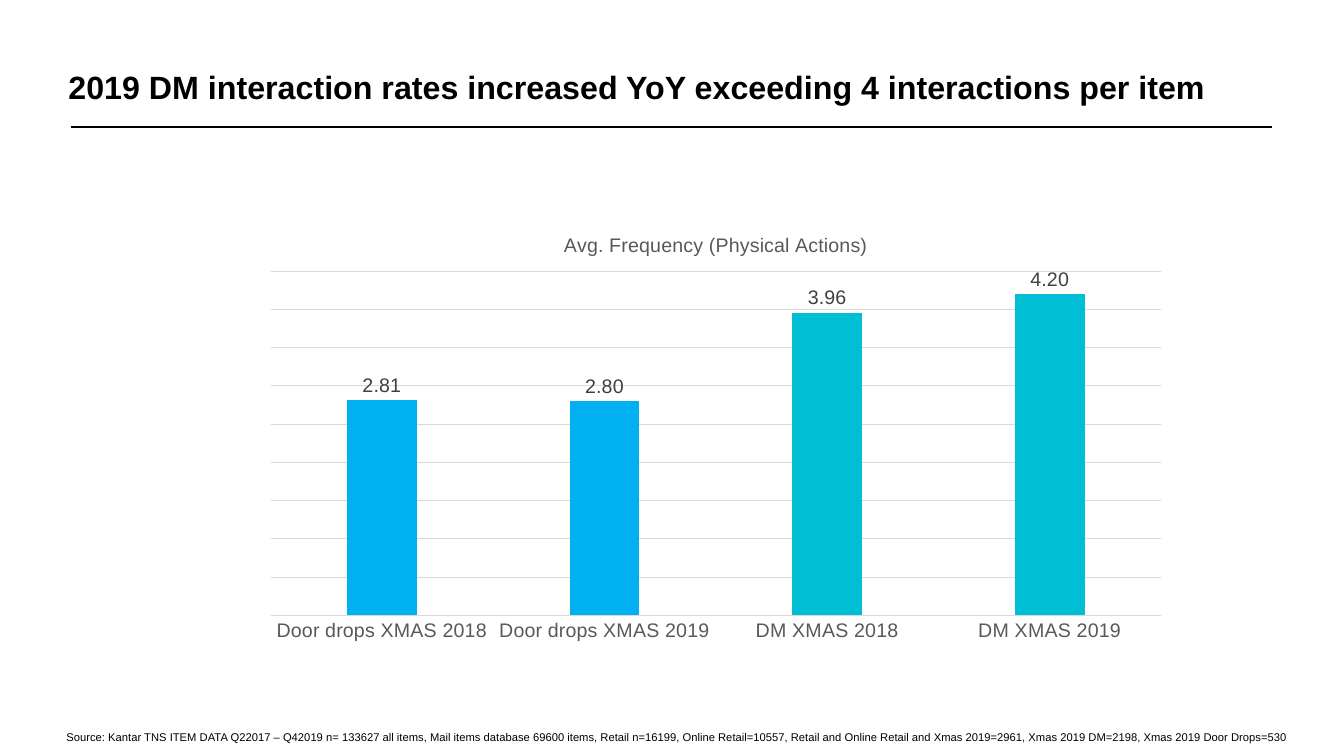
"""Build a slide comparing Christmas mail interaction rates in a column chart."""
from lxml import etree
from pptx import Presentation
from pptx.chart.data import CategoryChartData
from pptx.dml.color import RGBColor
from pptx.enum.chart import XL_CHART_TYPE, XL_LABEL_POSITION, XL_TICK_LABEL_POSITION, XL_TICK_MARK
from pptx.enum.shapes import MSO_CONNECTOR
from pptx.enum.text import MSO_ANCHOR
from pptx.oxml.ns import qn
from pptx.util import Inches, Pt

COLUMN = XL_CHART_TYPE.COLUMN_CLUSTERED
OUTSIDE_END = XL_LABEL_POSITION.OUTSIDE_END
NO_LABELS = XL_TICK_LABEL_POSITION.NONE
NO_TICKS = XL_TICK_MARK.NONE
STRAIGHT = MSO_CONNECTOR.STRAIGHT
TOP, MIDDLE = MSO_ANCHOR.TOP, MSO_ANCHOR.MIDDLE

BLACK = RGBColor(0x00, 0x00, 0x00)
DARK_GREY = RGBColor(0x40, 0x40, 0x40)
GREY = RGBColor(0x59, 0x59, 0x59)
LIGHT_GREY = RGBColor(0xD9, 0xD9, 0xD9)
TEAL = RGBColor(0x00, 0xBF, 0xD5)
BLUE = RGBColor(0x00, 0xB0, 0xF0)
FONT = "Arial"


def set_font(font, size, color, bold=False):
    font.name = FONT
    font.size = Pt(size)
    font.bold = bold
    font.color.rgb = color


def add_text(text, left, top, width, height, size, bold=False, anchor=TOP):
    box = page.shapes.add_textbox(Inches(left), Inches(top), Inches(width), Inches(height))
    box.text_frame.word_wrap = True
    box.text_frame.vertical_anchor = anchor
    span = box.text_frame.paragraphs[0].add_run()
    span.text = text
    set_font(span.font, size, BLACK, bold)


deck = Presentation()
deck.slide_width, deck.slide_height = Inches(13.33), Inches(7.5)
page = deck.slides.add_slide(deck.slide_layouts[6])

rule = page.shapes.add_connector(STRAIGHT, Inches(0.7), Inches(1.26), Inches(12.62), Inches(1.26))
rule.line.color.rgb = BLACK
rule.line.width = Pt(1.25)
etree.SubElement(rule.element.spPr, qn("a:effectLst"))

add_text("2019 DM interaction rates increased YoY exceeding 4 interactions per item",
         0.58, 0.61, 12.16, 0.49, size=23, bold=True, anchor=MIDDLE)
add_text("Source: Kantar TNS ITEM DATA Q22017 – Q42019 n= 133627 all items, "
         "Mail items database 69600 items, Retail n=16199, Online Retail=10557, "
         "Retail and Online Retail and Xmas 2019=2961, Xmas 2019 DM=2198, "
         "Xmas 2019 Door Drops=530",
         0.56, 7.2, 12.6, 0.43, size=8)

frequency = CategoryChartData(number_format="#,##0.00")
frequency.categories = ["Door drops XMAS 2018", "Door drops XMAS 2019", "DM XMAS 2018", "DM XMAS 2019"]
frequency.add_series("Series 1", [2.81, 2.8, 3.96, 4.2])
chart = page.shapes.add_chart(COLUMN, Inches(2.5), Inches(2.13), Inches(9.2), Inches(4.32), frequency).chart
set_font(chart.font, 10, BLACK)
chart.has_legend = False
chart.has_title = True
title = chart.chart_title
title.include_in_layout = False
title.text_frame.text = "Avg. Frequency (Physical Actions)"
set_font(title.text_frame.paragraphs[0].runs[0].font, 14, GREY)

category_axis = chart.category_axis
category_axis.major_tick_mark = NO_TICKS
category_axis.format.line.color.rgb = LIGHT_GREY
category_axis.format.line.width = Pt(0.75)
set_font(category_axis.tick_labels.font, 14, GREY)

value_axis = chart.value_axis
value_axis.visible = False
value_axis.tick_label_position = NO_LABELS
value_axis.minimum_scale, value_axis.maximum_scale, value_axis.major_unit = 0, 4.5, 0.5
value_axis.major_gridlines.format.line.color.rgb = LIGHT_GREY
value_axis.major_gridlines.format.line.width = Pt(0.75)

plot = chart.plots[0]
plot.gap_width, plot.overlap = 219, -27
plot.vary_by_categories = False
columns = plot.series[0]
columns.format.fill.solid()
columns.format.fill.fore_color.rgb = TEAL
for door_drop in range(2):
    fill = columns.points[door_drop].format.fill
    fill.solid()
    fill.fore_color.rgb = BLUE

labels = columns.data_labels
labels.show_value = True
labels.position = OUTSIDE_END
labels.number_format = "#,##0.00"
labels.number_format_is_linked = False
set_font(labels.font, 14, DARK_GREY)

deck.save("out.pptx")
